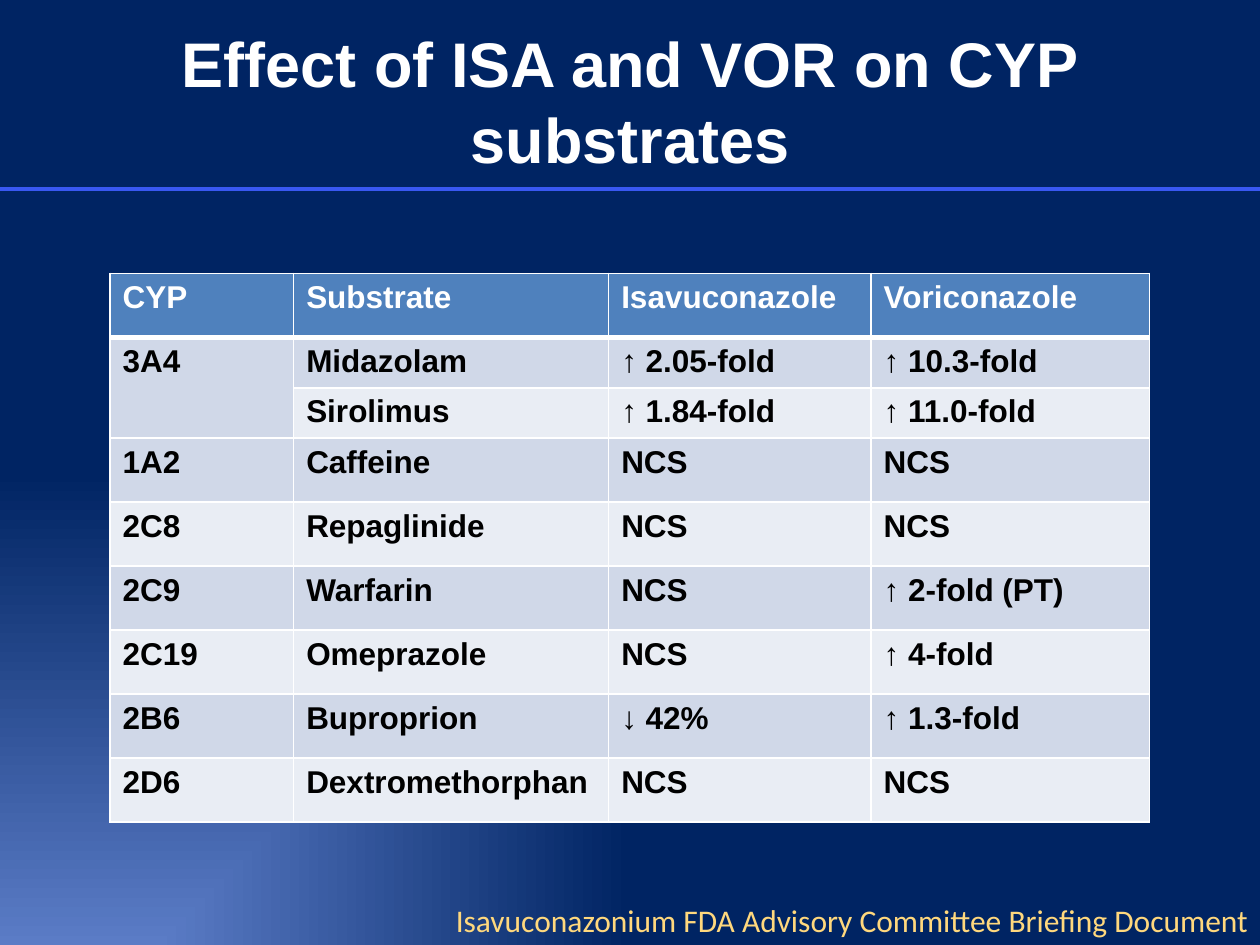
"""Build a slide with a table of ISA and VOR effects on CYP substrates."""
from lxml.etree import SubElement
from pptx import Presentation
from pptx.dml.color import RGBColor
from pptx.enum.shapes import MSO_CONNECTOR
from pptx.enum.text import MSO_ANCHOR, PP_ALIGN
from pptx.oxml.ns import qn
from pptx.util import Cm, Pt


def rgb(value):
    return RGBColor.from_string(value)


def add_run(p, text, size, font, color, bold=False):
    r = p.add_run()
    r.text = text
    r.font.size = Pt(size)
    r.font.name = font
    r.font.bold = bold
    r.font.color.rgb = rgb(color)


prs = Presentation()
prs.slide_width, prs.slide_height = Cm(25.4), Cm(19.05)
s = prs.slides.add_slide(prs.slide_layouts[6])

fill = s.background.fill
fill.gradient()
for stop, position, color in zip(fill.gradient_stops, (0, 1), ("5B7CC6", "002463")):
    stop.position = position
    stop.color.rgb = rgb(color)
grad = next(s.element.iter(qn("a:gradFill")))
grad.remove(grad.find(qn("a:lin")))
path = SubElement(grad, qn("a:path"), path="rect")
SubElement(path, qn("a:fillToRect"), t="100000", r="100000")

texts = [
    ("Effect of ISA and VOR on CYP substrates", (1.27, 0.43, 22.86, 3.18),
     PP_ALIGN.CENTER, MSO_ANCHOR.MIDDLE, (36, "Arial", "FFFFFF", True)),
    ("Isavuconazonium FDA Advisory Committee Briefing Document", (4.47, 18.03, 20.95, 1.02),
     PP_ALIGN.RIGHT, MSO_ANCHOR.TOP, (18, "Calibri", "FFD87D")),
]
for text, box, align, anchor, style in texts:
    tf = s.shapes.add_textbox(*map(Cm, box)).text_frame
    tf.word_wrap = True
    tf.vertical_anchor = anchor
    p = tf.paragraphs[0]
    p.alignment = align
    add_run(p, text, *style)

line = s.shapes.add_connector(MSO_CONNECTOR.STRAIGHT, 0, Cm(3.81), Cm(25.4), Cm(3.81))
line.line.color.rgb = rgb("3958F1")
line.line.width = Pt(2)
SubElement(line._element.spPr, qn("a:effectLst"))

rows = [
    ("CYP", "Substrate", "Isavuconazole", "Voriconazole"),
    ("3A4", "Midazolam", "↑ 2.05-fold", "↑ 10.3-fold"),
    ("", "Sirolimus", "↑ 1.84-fold", "↑ 11.0-fold"),
    ("1A2", "Caffeine", "NCS", "NCS"),
    ("2C8", "Repaglinide", "NCS", "NCS"),
    ("2C9", "Warfarin", "NCS", "↑ 2-fold (PT)"),
    ("2C19", "Omeprazole", "NCS", "↑ 4-fold"),
    ("2B6", "Buproprion", "↓ 42%", "↑ 1.3-fold"),
    ("2D6", "Dextromethorphan", "NCS", "NCS"),
]
table = s.shapes.add_table(len(rows), 4, Cm(2.22), Cm(5.51), Cm(20.95), Cm(11.05)).table
for column, width in zip(table.columns, (3.7, 6.35, 5.29, 5.61)):
    column.width = Cm(width)
for i, row in enumerate(rows):
    table.rows[i].height = Cm(0.64 if i in (1, 2) else 1.29)
    for j, text in enumerate(row):
        cell = table.cell(i, j)
        tcPr = cell._tc.get_or_add_tcPr()
        for side in "LRTB":
            thick = (i, side) in ((0, "B"), (1, "T"))
            ln = SubElement(tcPr, qn(f"a:ln{side}"), w=str(Pt(3 if thick else 1)))
            SubElement(SubElement(ln, qn("a:solidFill")), qn("a:srgbClr"), val="FFFFFF")
        cell.fill.solid()
        band = "D0D8E8" if i % 2 else "E9EDF4"
        cell.fill.fore_color.rgb = rgb(band if i else "4F81BD")
        if text:
            add_run(cell.text_frame.paragraphs[0], text, 18, "Arial",
                    "000000" if i else "FFFFFF", True)
table.cell(1, 0).merge(table.cell(2, 0))

prs.save("out.pptx")
